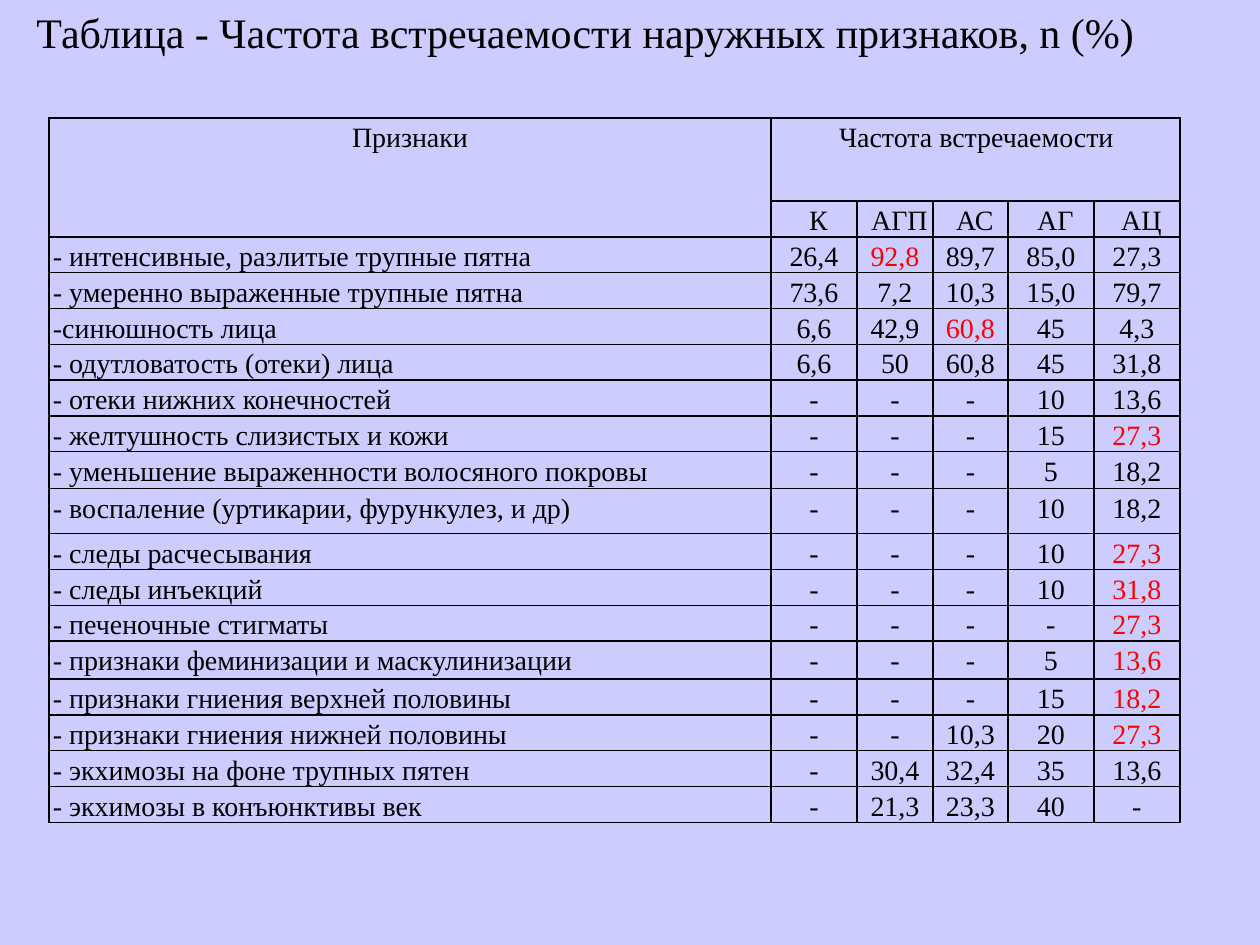
"""Build a slide with a table of how often external signs occur."""
from lxml.etree import SubElement
from pptx import Presentation
from pptx.dml.color import RGBColor
from pptx.enum.text import MSO_ANCHOR as Anchor, MSO_AUTO_SIZE as AutoSize, PP_ALIGN as Align
from pptx.oxml.ns import qn
from pptx.util import Pt

PX = 914400 // 126
FONT = "Times New Roman"
BLACK = RGBColor(0, 0, 0)
RED = RGBColor(255, 0, 0)
LAVENDER = RGBColor(0xCC, 0xCC, 0xFF)

TITLE = "Таблица - Частота встречаемости наружных признаков, n (%)"
SIGN_HEADING = "Признаки"
FREQUENCY_HEADING = "Частота встречаемости "
GROUPS = ["К", "АГП", "АС", "АГ", "АЦ"]
SIGNS = [
    ("- интенсивные, разлитые трупные пятна", "26,4 92,8 89,7 85,0 27,3", "АГП"),
    ("- умеренно выраженные трупные пятна", "73,6 7,2 10,3 15,0 79,7", None),
    ("-синюшность лица", "6,6 42,9 60,8 45 4,3", "АС"),
    ("- одутловатость (отеки) лица", "6,6 50 60,8 45 31,8", None),
    ("- отеки нижних конечностей", "- - - 10 13,6", None),
    ("- желтушность слизистых и кожи", "- - - 15 27,3", "АЦ"),
    ("- уменьшение выраженности волосяного покровы ", "- - - 5 18,2", None),
    ("- воспаление (уртикарии, фурункулез, и др)", "- - - 10 18,2", None),
    ("- следы расчесывания", "- - - 10 27,3", "АЦ"),
    ("- следы инъекций", "- - - 10 31,8", "АЦ"),
    ("- печеночные стигматы", "- - - - 27,3", "АЦ"),
    ("- признаки феминизации и маскулинизации", "- - - 5 13,6", "АЦ"),
    ("- признаки гниения верхней половины", "- - - 15 18,2", "АЦ"),
    ("- признаки гниения нижней половины", "- - 10,3 20 27,3", "АЦ"),
    ("- экхимозы на фоне трупных пятен", "- 30,4 32,4 35 13,6", None),
    ("- экхимозы в конъюнктивы век", "- 21,3 23,3 40 -", None),
]

TABLE_LEFT, TABLE_TOP, TABLE_HEIGHT = 49, 118, 746
COLUMN_WIDTHS = [722, 86, 76, 75, 86, 86]
ROW_HEIGHT = 25
TALLER_ROWS = {0: 83, 8: 37, 9: 45, 12: 29, 13: 38}
HEADING_INDENT = 9


def write(frame, text, size, align=Align.CENTER, color=BLACK, indent=0):
    paragraph = frame.paragraphs[0]
    paragraph.alignment = align
    if indent:
        properties = paragraph._p.get_or_add_pPr()
        properties.set("marL", "0")
        properties.set("indent", str(indent * PX))
    run = paragraph.add_run()
    run.text = text
    run.font.size = Pt(size)
    run.font.name = FONT
    run.font.color.rgb = color
    return paragraph


def fill_cell(cell, text, **style):
    paragraph = write(cell.text_frame, text, 16, **style)
    paragraph.line_spacing = 1.15
    paragraph.space_after = Pt(10)


def format_cell(cell):
    cell.margin_left = cell.margin_right = 4 * PX
    cell.margin_top = cell.margin_bottom = 0
    properties = cell._tc.get_or_add_tcPr()
    for side in ("a:lnL", "a:lnR", "a:lnT", "a:lnB"):
        border = SubElement(properties, qn(side), w=str(Pt(1)))
        color = SubElement(SubElement(border, qn("a:solidFill")), qn("a:srgbClr"))
        color.set("val", str(BLACK))
    cell.fill.background()


def add_title(slide):
    frame = slide.shapes.add_textbox(0, 0, 1162 * PX, 63 * PX).text_frame
    frame.word_wrap = True
    frame.auto_size = AutoSize.SHAPE_TO_FIT_TEXT
    frame.vertical_anchor = Anchor.MIDDLE
    write(frame, TITLE, 24, indent=HEADING_INDENT)


def add_signs_table(slide):
    holder = slide.shapes.add_table(
        len(SIGNS) + 2, len(COLUMN_WIDTHS), TABLE_LEFT * PX, TABLE_TOP * PX,
        sum(COLUMN_WIDTHS) * PX, TABLE_HEIGHT * PX)
    table = holder.table
    table.first_row = table.horz_banding = False
    for column, width in zip(table.columns, COLUMN_WIDTHS):
        column.width = width * PX
    for index, row in enumerate(table.rows):
        row.height = TALLER_ROWS.get(index, ROW_HEIGHT) * PX
    holder.height = TABLE_HEIGHT * PX
    for cell in table.iter_cells():
        format_cell(cell)

    table.cell(0, 0).merge(table.cell(1, 0))
    table.cell(0, 1).merge(table.cell(0, len(GROUPS)))
    fill_cell(table.cell(0, 0), SIGN_HEADING)
    fill_cell(table.cell(0, 1), FREQUENCY_HEADING, indent=HEADING_INDENT)
    for column, group in enumerate(GROUPS, 1):
        fill_cell(table.cell(1, column), group, indent=HEADING_INDENT)
    for row, (sign, shares, highlighted) in enumerate(SIGNS, 2):
        fill_cell(table.cell(row, 0), sign, align=Align.JUSTIFY)
        for column, (group, share) in enumerate(zip(GROUPS, shares.split()), 1):
            color = RED if group == highlighted else BLACK
            fill_cell(table.cell(row, column), share, color=color)


def main():
    deck = Presentation()
    deck.slide_width, deck.slide_height = 1260 * PX, 945 * PX
    slide = deck.slides.add_slide(deck.slide_layouts[6])
    slide.background.fill.solid()
    slide.background.fill.fore_color.rgb = LAVENDER
    add_signs_table(slide)
    add_title(slide)
    deck.save("out.pptx")


if __name__ == "__main__":
    main()
